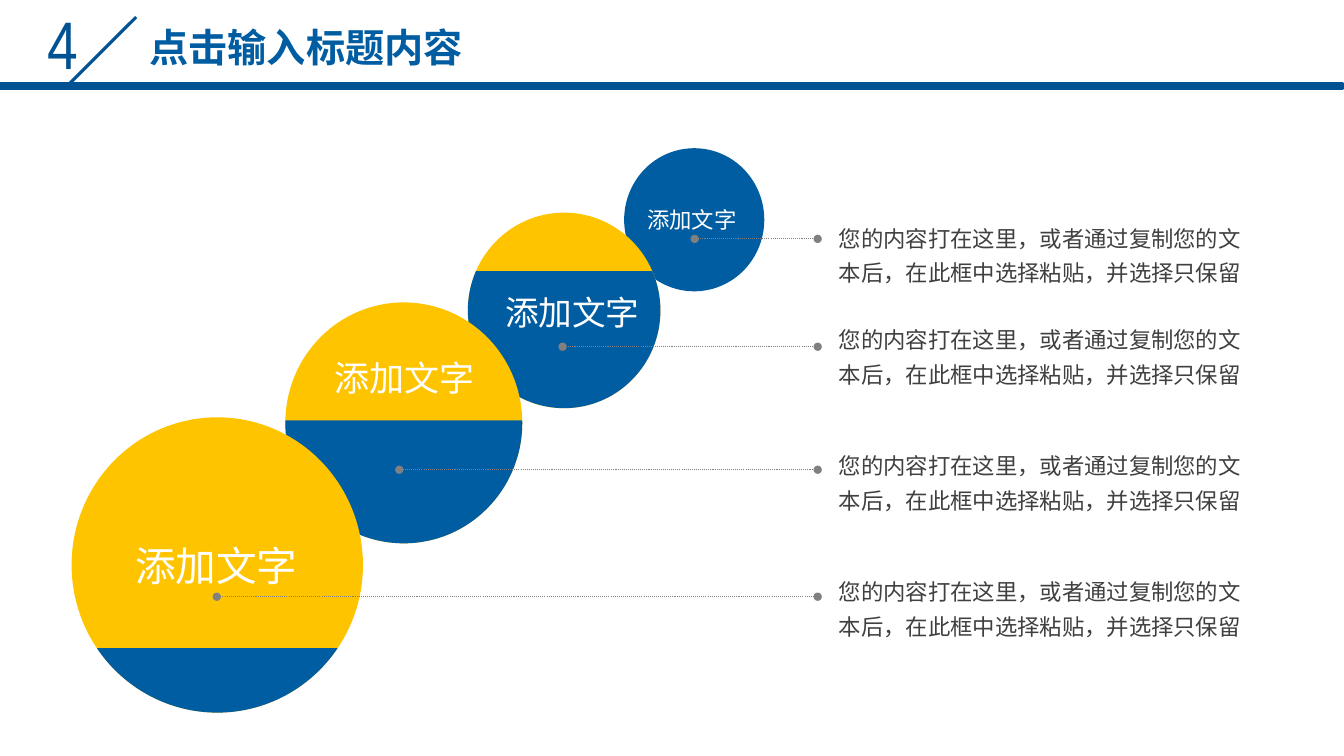
from math import asin, cos, pi, sin, tan

from lxml.etree import SubElement
from pptx import Presentation
from pptx.dml.color import RGBColor
from pptx.enum.dml import MSO_LINE
from pptx.enum.shapes import MSO_CONNECTOR, MSO_SHAPE
from pptx.enum.text import MSO_ANCHOR, PP_ALIGN
from pptx.oxml.ns import qn
from pptx.util import Inches, Pt

COLORS = {"navy": "005292", "blue": "005DA2", "yellow": "FFC400",
          "gray": "808080", "text": "404040", "white": "FFFFFF"}
CJK = "Noto Sans CJK SC"
TITLE = "点击输入标题内容"
LABEL = "添加文字"
BODY = "您的内容打在这里，或者通过复制您的文本后，在此框中选择粘贴，并选择只保留"

# From back to front: circle box, top of the blue part (None: all blue),
# label box, label size, start of the leader line, top of the description
STEPS = [
    ((6.19, 1.47, 1.39, 1.42), None, (6.31, 1.99, 1.11, 0.38), 16, (6.89, 2.37), 2.10),
    ((4.64, 2.11, 1.91, 1.94), 2.69, (4.90, 2.84, 1.56, 0.51), 24, (5.58, 3.44), 3.11),
    ((2.83, 3.00, 2.35, 2.39), 4.17, (3.21, 3.48, 1.61, 0.53), 25, (3.96, 4.66), 4.36),
    ((0.71, 4.14, 2.89, 2.93), 6.43, (1.23, 5.31, 1.84, 0.59), 29, (2.15, 5.92), 5.61),
]
LEADER_END = 8.11
BODY_LEFT, BODY_W, BODY_H = 8.21, 4.42, 0.84
SIDE_INSET = 0.11


def rgb(name):
    return RGBColor.from_string(COLORS[name])


def paint(s, color):
    s.shadow.inherit = False
    s.fill.solid()
    s.fill.fore_color.rgb = rgb(color)
    s.line.fill.background()


def write(s, text, size, color, font=CJK, wrap=True, anchor=MSO_ANCHOR.TOP, inset=0.1):
    tf = s.text_frame
    tf.word_wrap = wrap
    tf.vertical_anchor = anchor
    tf.margin_left = tf.margin_right = Inches(inset)
    p = tf.paragraphs[0]
    p.text = text
    p.font.size, p.font.name, p.font.color.rgb = Pt(size), font, rgb(color)
    for r in p.runs:
        SubElement(r.font._element, qn("a:ea"), typeface=font)
    return p


def add_text(slide, box, *args, **options):
    return write(slide.shapes.add_textbox(*map(Inches, box)), *args, **options)


def add_line(slide, start, end, color, width):
    points = map(Inches, (*start, *end))
    s = slide.shapes.add_connector(MSO_CONNECTOR.STRAIGHT, *points)
    s.line.color.rgb = rgb(color)
    s.line.width = Pt(width)
    SubElement(s._element.spPr, qn("a:effectLst"))
    return s


def bend(s):
    """Turn every three line segments of a freeform into one Bezier curve."""
    lines = list(s._element.iter(qn("a:lnTo")))
    for i in range(0, len(lines), 3):
        curve = lines[i].makeelement(qn("a:cubicBezTo"))
        lines[i].addprevious(curve)
        for line in lines[i:i + 3]:
            curve.append(line[0])
            line.getparent().remove(line)


def add_circle(slide, box, cut):
    s = slide.shapes.add_shape(MSO_SHAPE.OVAL, *map(Inches, box))
    paint(s, "yellow" if cut else "blue")
    if cut:
        add_blue_part(slide, box, cut)


def add_blue_part(slide, box, cut):
    left, top, w, h = box
    rx, ry = w / 2, h / 2
    cx, cy = left + rx, top + ry

    def point(angle, pull=0):
        """Point on the ellipse, moved along its tangent by pull."""
        return (Inches(cx + rx * (cos(angle) - pull * sin(angle))),
                Inches(cy + ry * (sin(angle) + pull * cos(angle))))

    first = asin((cut - cy) / ry)
    angles = [first, pi / 2, pi - first]
    if first < 0:
        angles = sorted(angles + [0, pi])
    curve = []
    for a, b in zip(angles, angles[1:]):
        pull = 4 / 3 * tan((b - a) / 4)
        curve += [point(a, pull), point(b, -pull), point(b)]
    builder = slide.shapes.build_freeform(*point(first))
    builder.add_line_segments(curve, close=True)
    s = builder.convert_to_shape()
    bend(s)
    paint(s, "blue")


def add_leader(slide, start):
    s = add_line(slide, start, (LEADER_END, start[1]), "gray", 0.75)
    s.line.dash_style = MSO_LINE.ROUND_DOT
    for end in ("a:headEnd", "a:tailEnd"):
        SubElement(s.line._ln, qn(end), type="oval")


def add_header(slide):
    add_text(slide, (0.37, -0.03, 0.34, 0.91), "4", 48, "navy", font="Arial Narrow")
    add_line(slide, (1.35, 0.17), (0.68, 0.84), "navy", 2.25)
    bar = slide.shapes.add_shape(MSO_SHAPE.RECTANGLE, 0, Inches(0.83),
                                 Inches(13.32), Inches(0.05))
    paint(bar, "navy")
    bar.line.color.rgb = rgb("navy")
    bar.line.width = Pt(2)
    title = slide.shapes.title
    title.left, title.top, title.width, title.height = map(Inches, (1.24, 0.18, 3.59, 0.57))
    p = write(title, TITLE, 28, "blue", anchor=MSO_ANCHOR.MIDDLE)
    p.alignment = PP_ALIGN.CENTER
    p.font.bold = True


def main():
    prs = Presentation()
    prs.slide_width, prs.slide_height = Inches(13.33), Inches(7.5)
    slide = prs.slides.add_slide(prs.slide_layouts[5])
    add_header(slide)
    for circle, cut, *_ in STEPS:
        add_circle(slide, circle, cut)
    for _, _, label, size, start, body_top in STEPS:
        add_text(slide, label, LABEL, size, "white", wrap=False,
                 anchor=MSO_ANCHOR.MIDDLE, inset=SIDE_INSET)
        add_leader(slide, start)
        p = add_text(slide, (BODY_LEFT, body_top, BODY_W, BODY_H), BODY, 16, "text",
                     inset=SIDE_INSET)
        p.line_spacing = 1.3
    prs.save("out.pptx")


if __name__ == "__main__":
    main()
